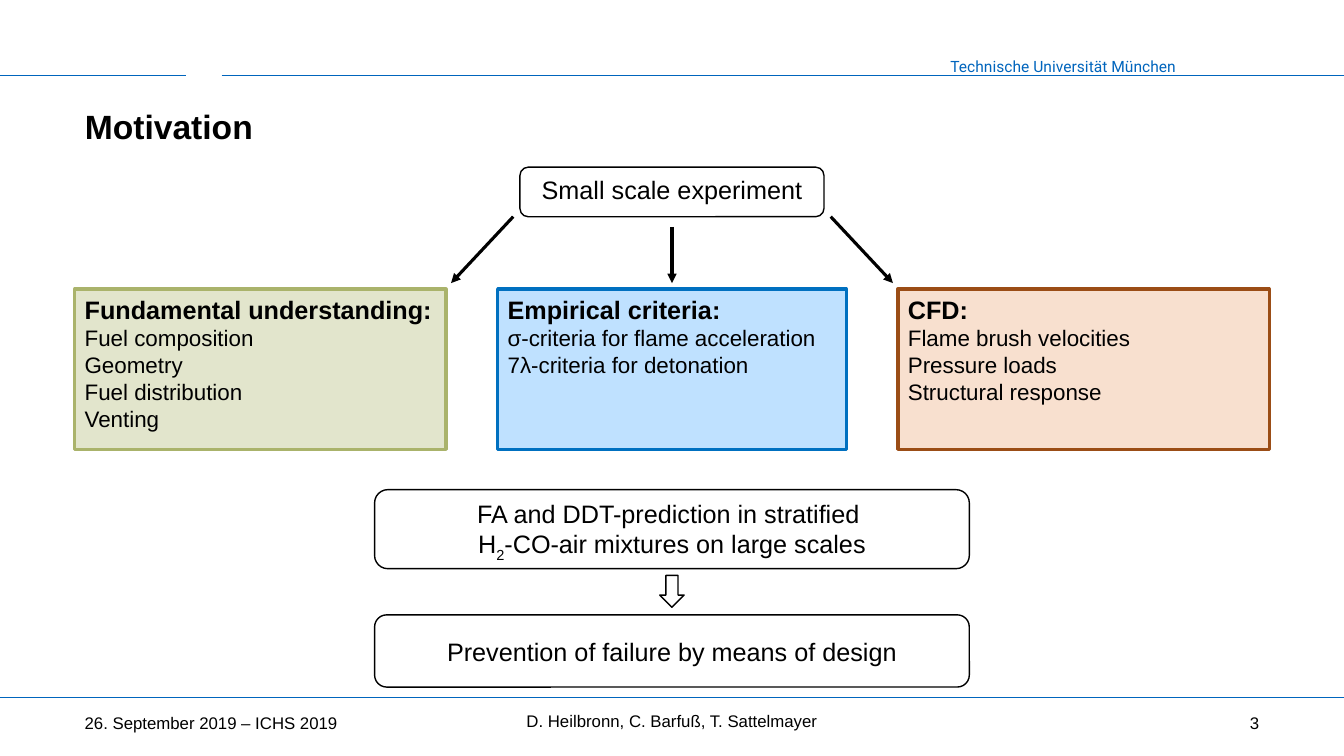
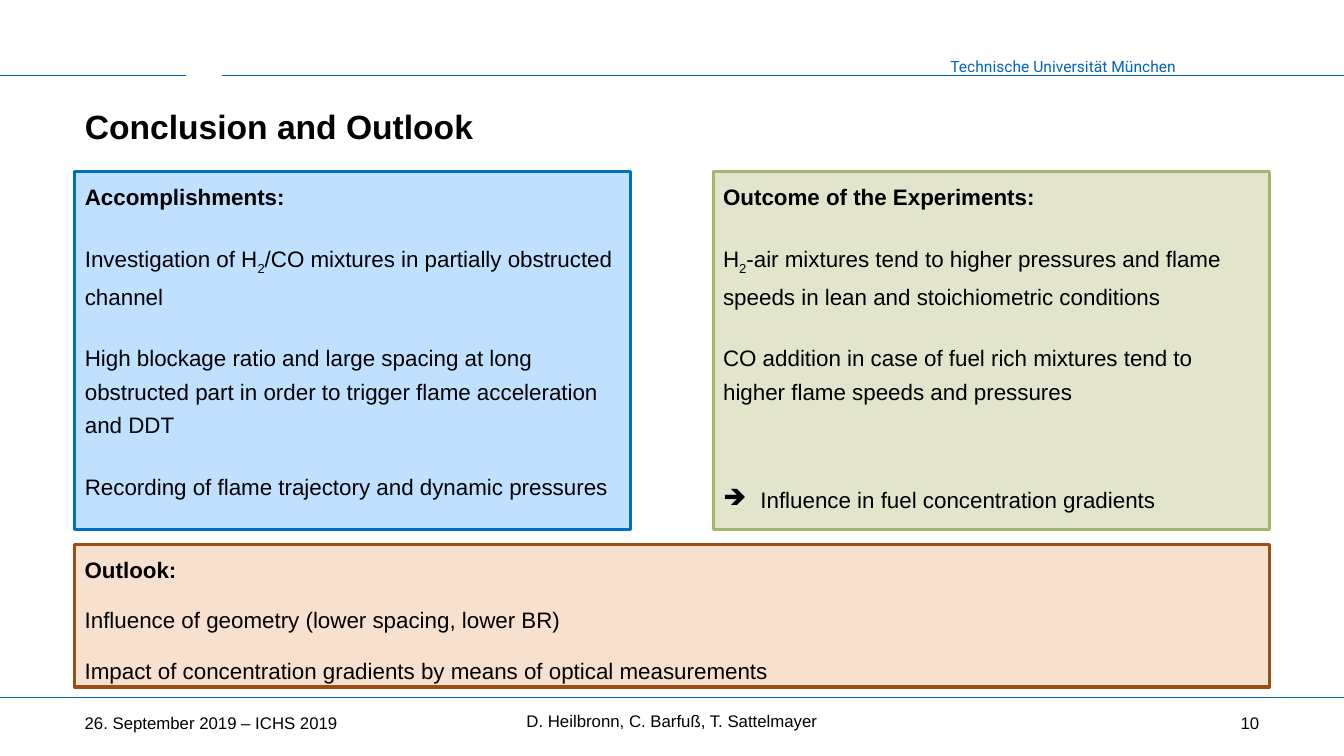
from lxml import etree
from pptx import Presentation, util as u
from pptx.dml.color import RGBColor
from pptx.enum import shapes, text
from pptx.oxml.ns import qn

COLS, ROWS = 160, 90
WIDE, HIGH = u.Inches(13.33), u.Inches(7.5)
HUES = {
    "black": "000000", "white": "FFFFFF", "brand": "0065BD",
    "green": "E2E5CC", "moss": "AAB36B",
    "blue": "BFE1FF", "navy": "0070C0",
    "peach": "F8E0CF", "rust": "9B4D16",
}
CARDS = {"green": "moss", "blue": "navy", "peach": "rust"}
PAGE = (0, 0, COLS, ROWS)
BODY = (8.9, 19.9, 142.2, 61.9)
ALIGN = {"l": text.PP_ALIGN.LEFT, "c": text.PP_ALIGN.CENTER, "r": text.PP_ALIGN.RIGHT}
TOP, MID = text.MSO_ANCHOR.TOP, text.MSO_ANCHOR.MIDDLE
RECT = shapes.MSO_SHAPE.RECTANGLE
ROUND = shapes.MSO_SHAPE.ROUNDED_RECTANGLE
DOWN = shapes.MSO_SHAPE.DOWN_ARROW


def hue(name):
    return RGBColor.from_string(HUES[name])


def point(x, y):
    return int(WIDE * x / COLS), int(HIGH * y / ROWS)


def sub(box, x, y, w, h):
    return box[0] + x, box[1] + y, w, h


def center(box, y, w, h):
    return sub(box, (box[2] - w) / 2, y, w, h)


def move(shape, box):
    shape.left, shape.top = point(*box[:2])
    shape.width, shape.height = point(*box[2:])


def write(shape, lines, size=16, bold=False, head=None, font="Arial", color="black",
          align="l", anchor=TOP, wrap=True, lead=1.0, gap=0, mark=None):
    frame = shape.text_frame
    frame.word_wrap, frame.vertical_anchor = wrap, anchor
    frame.auto_size = text.MSO_AUTO_SIZE.NONE
    for n, line in enumerate(lines):
        para = frame.paragraphs[0] if n == 0 else frame.add_paragraph()
        para.alignment = ALIGN[align]
        para.line_spacing = lead
        para.space_before = u.Pt(gap if n else 0)
        props = para._p.get_or_add_pPr()
        inset = u.Inches(0.37) if mark and n == len(lines) - 1 else 0
        props.set("marL", str(inset))
        props.set("indent", str(-inset))
        if inset:
            para.line_spacing = 3.0
            etree.SubElement(props, qn("a:buChar")).set("char", mark)
        else:
            etree.SubElement(props, qn("a:buNone"))
        title = head and n == 0
        for k, part in enumerate(line.split("~")):
            run = para.add_run()
            run.text = part
            run.font.name = font
            run.font.size = u.Pt(head if title else size)
            run.font.bold = bool(bold or title)
            run.font.color.rgb = hue(color)
            if k % 2:
                run.font._element.set("baseline", "-25000")


def paint(shape, fill, line, width):
    shape.fill.solid()
    shape.fill.fore_color.rgb = hue(fill)
    shape.line.color.rgb = hue(line)
    shape.line.width = u.Pt(width)


def label(slide, box, words, **form):
    shape = slide.shapes.add_textbox(*point(*box[:2]), *point(*box[2:]))
    write(shape, [words], **form)


def block(slide, box, kind, fill="white", line="black", width=1):
    shape = slide.shapes.add_shape(kind, *point(*box[:2]), *point(*box[2:]))
    shape.shadow.inherit = False
    paint(shape, fill, line, width)
    return shape


def card(slide, box, fill, lines, **form):
    shape = block(slide, box, RECT, fill, CARDS[fill], 2.25)
    write(shape, lines, **form)


def rule(slide, start, end, color="brand", width=0.75, arrow=False):
    line = slide.shapes.add_connector(
        shapes.MSO_CONNECTOR.STRAIGHT, *point(*start), *point(*end))
    line.line.color.rgb = hue(color)
    line.line.width = u.Pt(width)
    if arrow:
        etree.SubElement(line.line._get_or_add_ln(), qn("a:tailEnd")).set("type", "triangle")
    etree.SubElement(line._element.spPr, qn("a:effectLst"))


def header(slide, box, title):
    x, y, w, _ = box
    label(slide, sub(box, 111.8, 6.2, 29.4, 3.5), "Technische Universität München",
          size=11.1, font="Roboto", color="brand", align="r", wrap=False)
    for left, right in ((0, 22.2), (26.4, w)):
        rule(slide, (x + left, y + 9), (x + right, y + 9))
    move(slide.shapes.title, sub(box, 8.9, 12, 142.2, 8))
    write(slide.shapes.title, [title], size=24, bold=True)


def footer(slide, box, number):
    x, y, w, _ = box
    rule(slide, (x, y + 83), (x + w, y + 83))
    form = {"size": 12, "anchor": MID}
    label(slide, sub(box, 8.9, 84, 33.4, 4), "26. September 2019 – ICHS 2019", **form)
    label(slide, center(box, 83.4, 54, 4.8), "D. Heilbronn, C. Barfuß, T. Sattelmayer",
          align="c", **form)
    label(slide, sub(box, 117.7, 84, 33.4, 4), str(number), align="r", **form)


def goals(slide, box):
    x, y, w, _ = box
    mid = x + w / 2
    topics = (
        ("green", 44.2, ["Fundamental understanding:", "Fuel composition", "Geometry",
                         "Fuel distribution", "Venting"]),
        ("blue", 41.5, ["Empirical criteria:", "σ-criteria for flame acceleration",
                        "7λ-criteria for detonation"]),
        ("peach", 44.2, ["CFD:", "Flame brush velocities", "Pressure loads",
                         "Structural response"]),
    )
    gap = (w - sum(topic[1] for topic in topics)) / 2
    left = 0
    for fill, width, lines in topics:
        card(slide, sub(box, left, 14.5, width, 19.1), fill, lines, head=18)
        left += width + gap
    for near, far, top in ((-18.9, -26.3, 5.9), (0, 0, 7.1), (18.9, 26.3, 5.9)):
        rule(slide, (mid + near, y + top), (mid + far, y + 13.8), "black", 2.25, True)
    steps = (
        (0, 36.2, 5.9, TOP, ["Small scale experiment"]),
        (38.4, 70.8, 9.4, TOP, ["FA and DDT-prediction in stratified ",
                                "H~2~-CO-air mixtures on large scales"]),
        (53.3, 70.8, 8.6, MID, ["Prevention of failure by means of design"]),
    )
    for top, width, height, anchor, lines in steps:
        shape = block(slide, center(box, top, width, height), ROUND)
        write(shape, lines, size=18, align="c", anchor=anchor)
    block(slide, center(box, 48.6, 2.9, 3.8), DOWN)


def results(slide, box):
    wide, high = 66.2, 42.6
    form = {"head": 16, "lead": 1.25}
    done = slide.placeholders[1]
    move(done, sub(box, 0, 0.5, wide, high))
    paint(done, "blue", CARDS["blue"], 2.25)
    write(done, [
        "Accomplishments:",
        "Investigation of H~2~/CO mixtures in partially obstructed channel",
        "High blockage ratio and large spacing at long obstructed part "
        "in order to trigger flame acceleration and DDT",
        "Recording of flame trajectory and dynamic pressures"], gap=20, **form)
    card(slide, sub(box, box[2] - wide, 0.5, wide, high), "green", [
        "Outcome of the Experiments:",
        "H~2~-air mixtures tend to higher pressures and flame speeds "
        "in lean and stoichiometric conditions",
        "CO addition in case of fuel rich mixtures tend to higher flame speeds and pressures",
        "Influence in fuel concentration gradients"], gap=20, mark="➔", **form)
    card(slide, sub(box, 0, 44.9, box[2], 17), "peach", [
        "Outlook:",
        "Influence of geometry (lower spacing, lower BR)",
        "Impact of concentration gradients by means of optical measurements"],
        gap=12, **form)


def main():
    deck = Presentation()
    deck.slide_width, deck.slide_height = WIDE, HIGH
    pages = ((5, "Motivation", 3, goals), (1, "Conclusion and Outlook", 10, results))
    for layout, title, number, fill in pages:
        slide = deck.slides.add_slide(deck.slide_layouts[layout])
        header(slide, PAGE, title)
        fill(slide, BODY)
        footer(slide, PAGE, number)
    deck.save("out.pptx")


if __name__ == "__main__":
    main()
